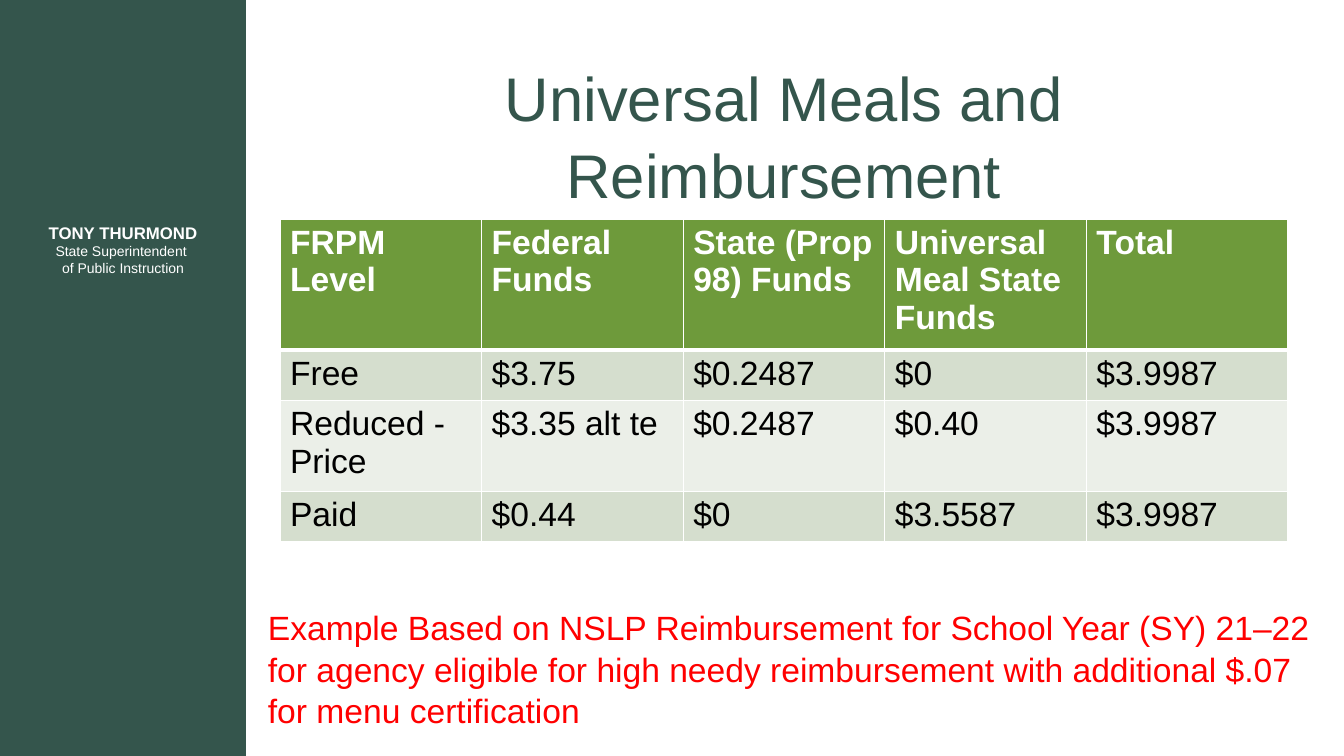
"""Build the Universal Meals and Reimbursement slide."""
from dataclasses import dataclass

from lxml.etree import SubElement
from pptx import Presentation
from pptx.dml.color import RGBColor
from pptx.enum.shapes import MSO_SHAPE as Preset
from pptx.enum.text import MSO_ANCHOR as Anchor, PP_ALIGN as Align
from pptx.oxml.ns import qn
from pptx.util import Emu, Pt

EMU_PER_PX = 914400 / 100.8
COLOURS = {
    "pine": "34554C", "white": "FFFFFF", "red": "FF0000", "black": "000000",
    "header": "6E9A3B", "odd": "D5DECE", "even": "EBEFE8",
}


@dataclass(frozen=True)
class Span:
    text: str
    size: int
    bold: bool = False


@dataclass(frozen=True)
class TextBox:
    spans: tuple[Span, ...]
    place: tuple[int, int, int, int]
    colour: str
    align: Align = Align.CENTER
    anchor: Anchor = Anchor.MIDDLE
    spacing: float = 1.0


@dataclass(frozen=True)
class Row:
    cells: tuple[str, ...]
    height: int
    fill: str
    colour: str = "black"
    bold: bool = False
    rule_below: int = 1
    rule_above: int = 1


BOXES = (
    TextBox((Span("TONY THURMOND\v", 12, True),
             Span("State Superintendent \vof Public Instruction", 10)),
            (29, 211, 188, 77), "white"),
    TextBox((Span("Universal Meals and Reimbursement", 44),),
            (280, 71, 1008, 126), "pine", spacing=1.04),
    TextBox((Span("Example Based on NSLP Reimbursement for School Year (SY) 21–22 "
                  "for agency eligible for high needy reimbursement with additional "
                  "$.07 for menu certification", 24),),
            (258, 600, 1074, 126), "red", Align.LEFT, Anchor.TOP, 1.04),
)
TABLE_PLACE = (280, 219, 1008, 301)
ROWS = (
    Row(("FRPM Level", "Federal Funds", "State (Prop 98) Funds",
         "Universal Meal State Funds", "Total"), 122, "header", "white", True, 3),
    Row(("Free", "$3.75", "$0.2487", "$0", "$3.9987"), 47, "odd", rule_above=3),
    Row(("Reduced - Price", "$3.35 alt te", "$0.2487", "$0.40", "$3.9987"), 85, "even"),
    Row(("Paid", "$0.44", "$0", "$3.5587", "$3.9987"), 47, "odd"),
)


def px(length: float) -> Emu:
    """Turn pixels into EMU."""
    return Emu(round(length * EMU_PER_PX))


def rgb(name: str) -> RGBColor:
    """Look up a named colour."""
    return RGBColor.from_string(COLOURS[name])


def add_text(para, text: str, *, size: int, colour: str, bold: bool = False) -> None:
    """Append formatted text, with vertical tabs as line breaks."""
    for index, line in enumerate(text.split("\v")):
        if index:
            para.add_line_break()
        if line:
            span = para.add_run()
            span.text = line
            span.font.name = "Arial"
            span.font.size = Pt(size)
            span.font.bold = bold
            span.font.color.rgb = rgb(colour)


def draw_sidebar(page) -> None:
    """Draw the dark band on the left."""
    band = page.shapes.add_shape(Preset.RECTANGLE, 0, 0, px(246), px(756))
    band.shadow.inherit = False
    band.fill.solid()
    band.fill.fore_color.rgb = rgb("pine")
    band.line.fill.background()


def draw_box(page, box: TextBox) -> None:
    """Draw one text box."""
    frame = page.shapes.add_textbox(*map(px, box.place)).text_frame
    frame.word_wrap = True
    frame.vertical_anchor = box.anchor
    para = frame.paragraphs[0]
    para.alignment = box.align
    para.line_spacing = box.spacing
    for span in box.spans:
        add_text(para, span.text, size=span.size, colour=box.colour, bold=span.bold)


def draw_borders(cell, above: int, below: int) -> None:
    """Give a cell white rules, placed ahead of its fill."""
    properties = cell._tc.get_or_add_tcPr()
    widths = {"a:lnL": 1, "a:lnR": 1, "a:lnT": above, "a:lnB": below}
    for tag, width in widths.items():
        rule = SubElement(properties, qn(tag), w=str(Pt(width)))
        fill = SubElement(rule, qn("a:solidFill"))
        SubElement(fill, qn("a:srgbClr"), val=COLOURS["white"])


def draw_table(page) -> None:
    """Draw the reimbursement table."""
    columns = len(ROWS[0].cells)
    table = page.shapes.add_table(len(ROWS), columns, *map(px, TABLE_PLACE)).table
    for column in table.columns:
        column.width = px(TABLE_PLACE[2] / columns)
    for index, row in enumerate(ROWS):
        table.rows[index].height = px(row.height)
        for cell, text in zip(table.rows[index].cells, row.cells):
            draw_borders(cell, row.rule_above, row.rule_below)
            cell.fill.solid()
            cell.fill.fore_color.rgb = rgb(row.fill)
            add_text(cell.text_frame.paragraphs[0], text,
                     size=24, colour=row.colour, bold=row.bold)


def main() -> None:
    """Build and save the deck."""
    deck = Presentation()
    deck.slide_width, deck.slide_height = px(1344), px(756)
    page = deck.slides.add_slide(deck.slide_layouts[6])
    draw_sidebar(page)
    for box in BOXES:
        draw_box(page, box)
    draw_table(page)
    deck.save("out.pptx")


if __name__ == "__main__":
    main()
